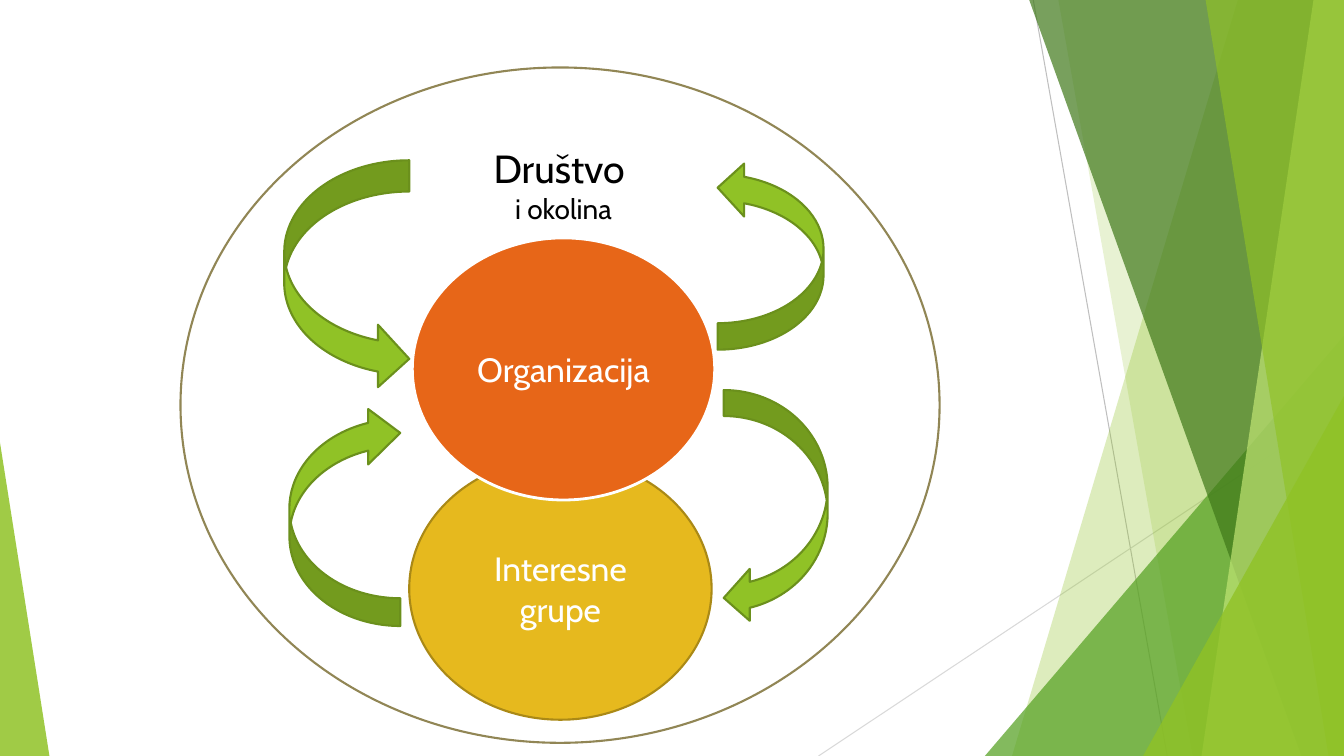
"""Build a slide of an organisation between its society and interest groups."""
from dataclasses import dataclass

from lxml import etree
from pptx import Presentation
from pptx.dml.color import RGBColor
from pptx.enum.shapes import MSO_CONNECTOR, MSO_SHAPE
from pptx.enum.text import MSO_ANCHOR, PP_ALIGN
from pptx.oxml.ns import qn
from pptx.util import Inches, Pt

STRAIGHT = MSO_CONNECTOR.STRAIGHT
ELLIPSE = MSO_SHAPE.OVAL
TRIANGLE = MSO_SHAPE.ISOSCELES_TRIANGLE
RIGHT_ARROW = MSO_SHAPE.CURVED_RIGHT_ARROW
LEFT_ARROW = MSO_SHAPE.CURVED_LEFT_ARROW
CENTER = PP_ALIGN.CENTER
MIDDLE = MSO_ANCHOR.MIDDLE
WIDTH, HEIGHT = Inches(13.33), Inches(7.5)
FONT = "Cabin"
GREEN, DARK_GREEN, WHITE = "90C226", "6B901C", "FFFFFF"


@dataclass(frozen=True)
class Box:
    left: float
    top: float
    width: float
    height: float


@dataclass(frozen=True)
class Ray:
    start: tuple[float, float]
    end: tuple[float, float]
    color: str


@dataclass(frozen=True)
class Panel:
    top_left: float
    bottom_left: float
    color: str
    opacity: int


@dataclass(frozen=True)
class Corner:
    box: Box
    apex: float
    color: str
    opacity: int


@dataclass(frozen=True)
class Circle:
    box: Box
    fill: str
    line: str
    line_width: float
    text: str = ""


@dataclass(frozen=True)
class Arrow:
    box: Box
    kind: MSO_SHAPE
    flipped: bool = False
    head: float = 0.25


RAYS = (
    Ray((76.88, 0), (86.85, 100), "BFBFBF"),
    Ray((100, 53.73), (60.9, 100), "D9D9D9"),
)
FACETS = (
    Panel(92.1, 75.3, GREEN, 30),
    Panel(78.75, 88.73, GREEN, 20),
    Corner(Box(73.28, 44.4, 26.72, 55.6), 1, "54A021", 72),
    Panel(76.58, 96.83, "3F7819", 70),
    Panel(97.73, 89.4, "C0E474", 70),
    Panel(89.7, 98.85, GREEN, 65),
    Corner(Box(85.05, 52.4, 14.95, 47.6), 1, GREEN, 80),
    Corner(Box(0, 58.53, 3.68, 41.47), 0, GREEN, 85),
)
CIRCLES = (
    Circle(Box(13.43, 8.93, 56.48, 89.33), WHITE, "918655", 1.5),
    Circle(Box(30.45, 60.53, 22.5, 34.67), "E6B91E", "AA8916", 1.5, "Interesne grupe"),
    Circle(Box(30.68, 31.47, 22.5, 34.67), "E76618", WHITE, 2, "Organizacija"),
)
ARROWS = (
    Arrow(Box(21.15, 21.2, 9.3, 30.4), RIGHT_ARROW),
    Arrow(Box(53.85, 51.6, 7.73, 30.93), LEFT_ARROW),
    Arrow(Box(53.4, 21.33, 7.88, 24.93), LEFT_ARROW, flipped=True),
    Arrow(Box(21.53, 53.6, 8.25, 29.2), RIGHT_ARROW, flipped=True, head=0.289),
)
TITLE_BOX = Box(34.2, 18.4, 15.45, 12.13)
TITLE_LINES = (("Društvo ", 28), ("i okolina", 20))


def across(share: float) -> int:
    return round(WIDTH * share / 100)


def down(share: float) -> int:
    return round(HEIGHT * share / 100)


def place(box: Box) -> tuple[int, int, int, int]:
    return across(box.left), down(box.top), across(box.width), down(box.height)


def set_color(color_format, color: str) -> None:
    color_format.rgb = RGBColor.from_string(color)


def set_fill(shape, color: str, opacity: int = 100) -> None:
    shape.shadow.inherit = False
    shape.fill.solid()
    set_color(shape.fill.fore_color, color)
    if opacity < 100:
        color_element = shape.fill._xPr.find(qn("a:solidFill"))[0]
        etree.SubElement(color_element, qn("a:alpha"), val=str(opacity * 1000))


def set_line(shape, color: str, width: float) -> None:
    set_color(shape.line.color, color)
    shape.line.width = Pt(width)


def write(paragraph, text: str, size: float, color: str) -> None:
    paragraph.text = text
    paragraph.alignment = CENTER
    paragraph.font.name = FONT
    paragraph.font.size = Pt(size)
    set_color(paragraph.font.color, color)


def draw_ray(slide, ray: Ray) -> None:
    (x1, y1), (x2, y2) = ray.start, ray.end
    line = slide.shapes.add_connector(STRAIGHT, across(x1), down(y1), across(x2), down(y2))
    set_line(line, ray.color, 0.75)
    etree.SubElement(line._element.spPr, qn("a:effectLst"))


def draw_facet(slide, facet: Panel | Corner) -> None:
    if isinstance(facet, Panel):
        builder = slide.shapes.build_freeform(across(facet.top_left), 0)
        builder.add_line_segments(
            [(WIDTH, 0), (WIDTH, HEIGHT), (across(facet.bottom_left), HEIGHT)])
        shape = builder.convert_to_shape()
    else:
        shape = slide.shapes.add_shape(TRIANGLE, *place(facet.box))
        shape.adjustments[0] = facet.apex
    set_fill(shape, facet.color, facet.opacity)
    shape.line.fill.background()


def draw_circle(slide, circle: Circle) -> None:
    shape = slide.shapes.add_shape(ELLIPSE, *place(circle.box))
    set_fill(shape, circle.fill)
    set_line(shape, circle.line, circle.line_width)
    if circle.text:
        shape.text_frame.word_wrap = True
        shape.text_frame.vertical_anchor = MIDDLE
        write(shape.text_frame.paragraphs[0], circle.text, 24, WHITE)


def draw_arrow(slide, arrow: Arrow) -> None:
    shape = slide.shapes.add_shape(arrow.kind, *place(arrow.box))
    shape.adjustments[2] = arrow.head
    set_fill(shape, GREEN)
    set_line(shape, DARK_GREEN, 1.5)
    if arrow.flipped:
        shape._element.spPr.find(qn("a:xfrm")).set("flipV", "1")


def draw_title(slide) -> None:
    frame = slide.shapes.add_textbox(*place(TITLE_BOX)).text_frame
    frame.word_wrap = True
    for index, (text, size) in enumerate(TITLE_LINES):
        paragraph = frame.add_paragraph() if index else frame.paragraphs[0]
        write(paragraph, text, size, "000000")


def main() -> None:
    presentation = Presentation()
    presentation.slide_width, presentation.slide_height = WIDTH, HEIGHT
    slide = presentation.slides.add_slide(presentation.slide_layouts[6])
    for ray in RAYS:
        draw_ray(slide, ray)
    for facet in FACETS:
        draw_facet(slide, facet)
    for circle in CIRCLES:
        draw_circle(slide, circle)
    for arrow in ARROWS:
        draw_arrow(slide, arrow)
    draw_title(slide)
    presentation.save("out.pptx")


if __name__ == "__main__":
    main()
